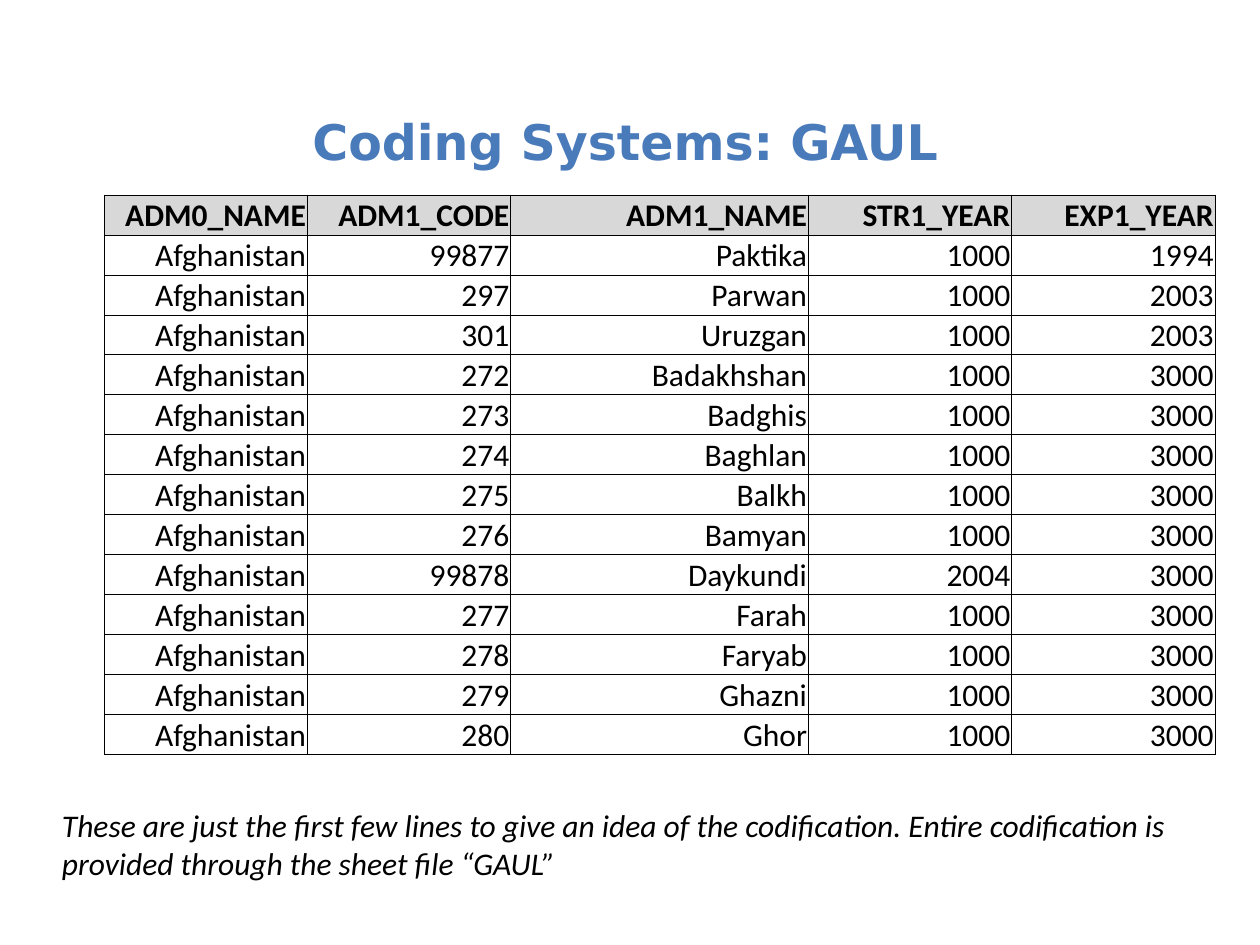
"""Build the slide that shows the first lines of the GAUL coding system."""
import pptx
import pptx.dml.color
import pptx.enum.text
import pptx.oxml
import pptx.oxml.ns
import pptx.util

Cm = pptx.util.Cm
Pt = pptx.util.Pt
ALIGN = pptx.enum.text.PP_ALIGN
ANCHOR = pptx.enum.text.MSO_ANCHOR

HUES = {"title": "497ABA", "text": "000000", "head": "D8D8D8", "line": "000000"}
HEADS = ["ADM0_NAME", "ADM1_CODE", "ADM1_NAME", "STR1_YEAR", "EXP1_YEAR"]
AREAS = [
    (99877, "Paktika", 1000, 1994),
    (297, "Parwan", 1000, 2003),
    (301, "Uruzgan", 1000, 2003),
    (272, "Badakhshan", 1000, 3000),
    (273, "Badghis", 1000, 3000),
    (274, "Baghlan", 1000, 3000),
    (275, "Balkh", 1000, 3000),
    (276, "Bamyan", 1000, 3000),
    (99878, "Daykundi", 2004, 3000),
    (277, "Farah", 1000, 3000),
    (278, "Faryab", 1000, 3000),
    (279, "Ghazni", 1000, 3000),
    (280, "Ghor", 1000, 3000),
]
WIDTHS = [4.1, 4.1, 6, 4.1, 4.1]
NOTE = ("These are just the first few lines to give an idea of the codification. "
        "Entire codification is provided through the sheet file “GAUL”")


def apply(item, form):
    for name, value in form.items():
        setattr(item, name, value)


class Page:
    body = {"name": "Calibri", "size": Pt(18), "bold": False, "italic": False}
    top = {"name": "DejaVu Sans", "size": Pt(28), "bold": True}
    cell = {"margin_left": Cm(0.03), "margin_right": Cm(0.03), "margin_top": Cm(0.03),
            "margin_bottom": 0, "vertical_anchor": ANCHOR.BOTTOM}

    def __init__(self, slide):
        self.slide = slide

    def label(self, frame, text, form, hue, align):
        para = frame.paragraphs[0]
        para.alignment = align
        run = para.add_run()
        run.text = text
        apply(run.font, form)
        run.font.color.rgb = pptx.dml.color.RGBColor.from_string(HUES[hue])

    def title(self, text, left, top, width, height):
        shape = self.slide.shapes.title
        apply(shape, {"left": Cm(left), "top": Cm(top),
                      "width": Cm(width), "height": Cm(height)})
        apply(shape.text_frame, {"word_wrap": True, "vertical_anchor": ANCHOR.MIDDLE})
        self.label(shape.text_frame, text, self.top, "title", ALIGN.CENTER)

    def note(self, text, left, top, width, height):
        box = self.slide.shapes.add_textbox(Cm(left), Cm(top), Cm(width), Cm(height))
        box.text_frame.word_wrap = True
        self.label(box.text_frame, text, self.body | {"italic": True}, "text", ALIGN.LEFT)

    def edge(self, cell):
        props = cell._tc.get_or_add_tcPr()
        for side in "LRTB":
            props.append(pptx.oxml.parse_xml(
                f'<a:ln{side} {pptx.oxml.ns.nsdecls("a")} w="{Pt(0.5)}"><a:solidFill>'
                f'<a:srgbClr val="{HUES["line"]}"/></a:solidFill></a:ln{side}>'))

    def table(self, rows, widths, left, top, step):
        grid = self.slide.shapes.add_table(
            len(rows), len(widths), Cm(left), Cm(top),
            Cm(sum(widths)), Cm(step * len(rows))).table
        apply(grid, {"first_row": True, "horz_banding": False})
        for col, width in zip(grid.columns, widths):
            col.width = Cm(width)
        for i, row in enumerate(rows):
            grid.rows[i].height = Cm(step)
            for j, value in enumerate(row):
                cell = grid.cell(i, j)
                apply(cell, self.cell)
                self.edge(cell)
                if i == 0:
                    cell.fill.solid()
                    cell.fill.fore_color.rgb = pptx.dml.color.RGBColor.from_string(HUES["head"])
                else:
                    cell.fill.background()
                self.label(cell.text_frame, str(value), self.body | {"bold": i == 0},
                           "text", ALIGN.RIGHT)


def main():
    deck = pptx.Presentation()
    apply(deck, {"slide_width": Cm(25.4), "slide_height": Cm(19.05)})
    page = Page(deck.slides.add_slide(deck.slide_layouts[5]))
    page.title("Coding Systems: GAUL", 0.7, 1.65, 23.8, 2.4)
    page.table([HEADS] + [("Afghanistan", *area) for area in AREAS], WIDTHS, 2.1, 3.93, 0.8)
    page.note(NOTE, 1, 16.13, 24.5, 1.8)
    deck.save("out.pptx")


if __name__ == "__main__":
    main()
